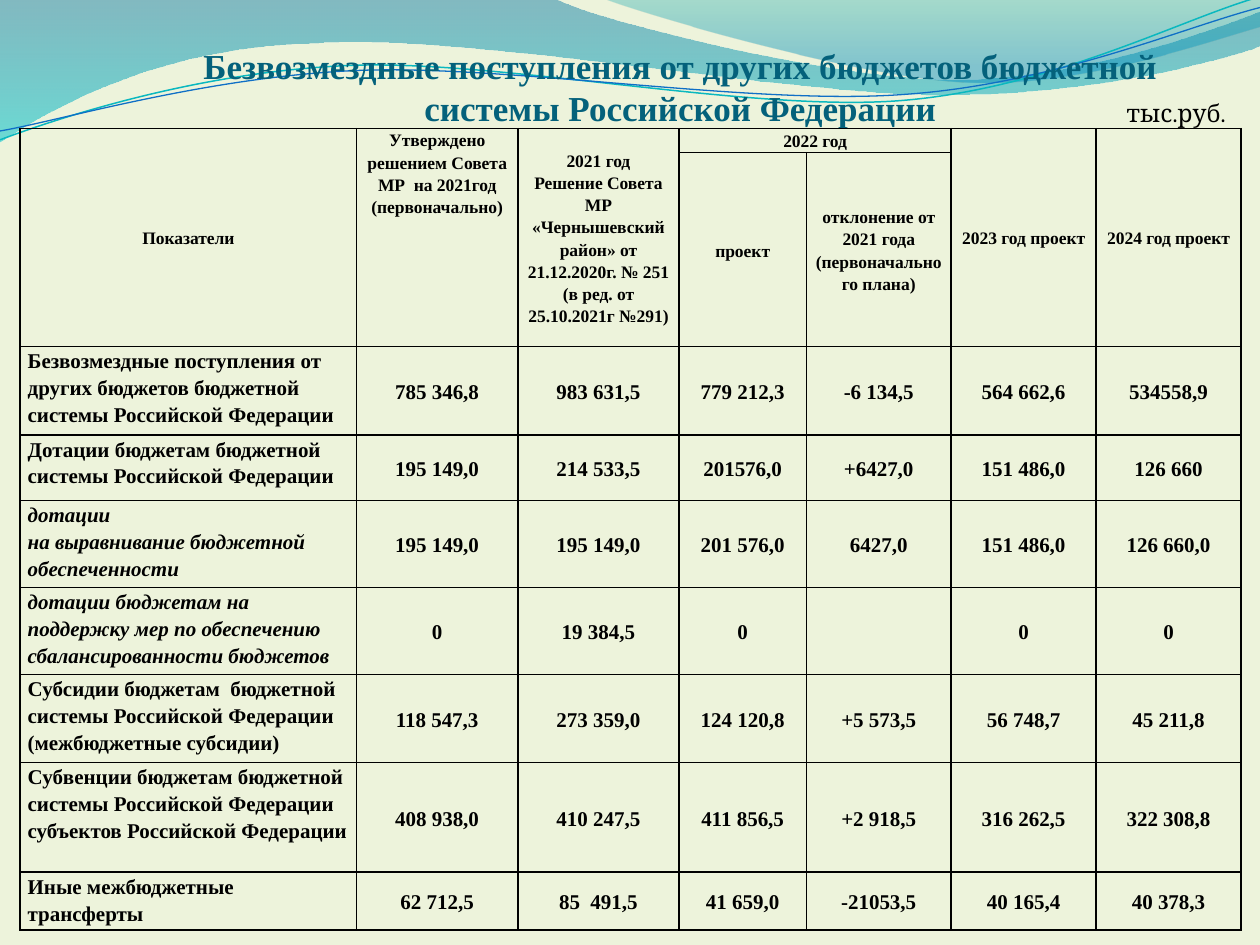
"""Build the slide on budget transfers with its wave header and table."""
import math

import pptx
import pptx.dml.color
import pptx.enum.text
import pptx.oxml
import pptx.oxml.ns
import pptx.util
from pptx.util import Inches

ALIGN = pptx.enum.text.PP_ALIGN
ANCHOR = pptx.enum.text.MSO_ANCHOR
FONT = "Times New Roman"
INK = "000000"
NAMESPACE = pptx.oxml.ns.nsdecls("a")

TITLE = "Безвозмездные поступления от других бюджетов бюджетной системы Российской Федерации"
UNIT = "тыс.руб."
HEADERS = [
    (0, 0, 1, 0, "Показатели"),
    (0, 1, 1, 1, "Утверждено решением Совета МР  на 2021год (первоначально)"),
    (0, 2, 1, 2, "2021 год\nРешение Совета МР «Чернышевский район» от 21.12.2020г. № 251 (в ред. от 25.10.2021г №291)"),
    (0, 3, 0, 4, "2022 год"),
    (0, 5, 1, 5, "2023 год проект"),
    (0, 6, 1, 6, "2024 год проект"),
    (1, 3, 1, 3, "проект"),
    (1, 4, 1, 4, "отклонение от 2021 года (первоначального плана)"),
]
ROWS = [
    ["Безвозмездные поступления от других бюджетов бюджетной системы Российской Федерации",
     "785 346,8", "983 631,5", "779 212,3", "-6 134,5", "564 662,6", "534558,9"],
    ["Дотации бюджетам бюджетной системы Российской Федерации",
     "195 149,0", "214 533,5", "201576,0", "+6427,0", "151 486,0", "126 660"],
    ["дотации\nна выравнивание бюджетной обеспеченности",
     "195 149,0", "195 149,0", "201 576,0", "6427,0", "151 486,0", "126 660,0"],
    ["дотации бюджетам на поддержку мер по обеспечению сбалансированности бюджетов",
     "0", "19 384,5", "0", "", "0", "0"],
    ["Субсидии бюджетам  бюджетной системы Российской Федерации (межбюджетные субсидии)",
     "118 547,3", "273 359,0", "124 120,8", "+5 573,5", "56 748,7", "45 211,8"],
    ["Субвенции бюджетам бюджетной системы Российской Федерации субъектов Российской Федерации",
     "408 938,0", "410 247,5", "411 856,5", "+2 918,5", "316 262,5", "322 308,8"],
    ["Иные межбюджетные трансферты",
     "62 712,5", "85  491,5", "41 659,0", "-21053,5", "40 165,4", "40 378,3"],
]
TABLE_PLACE = (0.16, 1.02, 9.69, 6.31)
COLUMN_WIDTHS = [2.67, 1.28, 1.28, 1.01, 1.15, 1.15, 1.15]
ROW_HEIGHTS = [0.17, 1.54, 0.7, 0.52, 0.45, 0.45, 0.7, 0.87, 0.35]

WAVES = [
    {"outline": [(0, 0), (4.4, -0.01), (4.76, 0.17, 6.64, 0.63, 7.58, 0.63),
                 (8.53, 0.63, 9.58, 0.26, 10, 0.09), (10.01, 0.36),
                 (9.83, 0.44, 8.7, 0.76, 7.46, 0.75), (6.22, 0.75, 3.82, 0.28, 2.57, 0.34),
                 (1.29, 0.36, 0.46, 0.83, -0.01, 1.13), (0, 0)],
     "stops": [(0, "0074A1", 45), (100, "00C6CF", 55)]},
    {"outline": [(4.79, -0.01), (5.09, 0.11, 6.82, 0.62, 7.69, 0.65),
                 (8.56, 0.69, 9.61, 0.32, 10, 0.21), (10, 0), (4.79, -0.01)],
     "stops": [(0, "00A1A9", 30), (80, "008BBF", 45)]},
    {"outline": [(0, 1.11), (0.48, 0.93, 1.58, 0.57, 2.77, 0.52),
                 (3.95, 0.47, 5.93, 0.89, 7.13, 0.8), (8.33, 0.71, 9.38, 0.15, 9.98, -0.02)],
     "line": ("0AB8BF", 0.85), "turn": (357.3, 4.99, 0.57)},
    {"outline": [(0, 1.04), (0.47, 0.96, 1.64, 0.61, 2.83, 0.56),
                 (4.03, 0.51, 5.97, 0.84, 7.17, 0.75), (8.36, 0.67, 9.41, 0.21, 10, 0.06)],
     "line": ("0F6FC6", 0.75), "turn": (357.3, 5, 0.59)},
]


def color(value):
    return pptx.dml.color.RGBColor.from_string(value)


def apply(target, values):
    for name, value in values.items():
        setattr(target, name, value)


def level(x, y, angle, center_x, center_y):
    turn = math.radians(-angle)
    across, down = x - center_x, y - center_y
    return (Inches(center_x + across * math.cos(turn) - down * math.sin(turn)),
            Inches(center_y + across * math.sin(turn) + down * math.cos(turn)))


def add_wave(page, outline, stops=None, line=None, turn=(0, 0, 0)):
    steps = [[level(x, y, *turn) for x, y in zip(step[::2], step[1::2])] for step in outline]
    builder = page.shapes.build_freeform(*steps[0][0], scale=1.0)
    builder.add_line_segments([step[-1] for step in steps[1:]], close=bool(stops))
    shape = builder.convert_to_shape()
    for segment, step in zip(list(shape._element.iter(pptx.oxml.ns.qn("a:lnTo"))), steps[1:]):
        if len(step) == 3:
            points = "".join(f'<a:pt x="{x - shape.left}" y="{y - shape.top}"/>' for x, y in step)
            segment.getparent().replace(segment, pptx.oxml.parse_xml(
                f'<a:cubicBezTo {NAMESPACE}>{points}</a:cubicBezTo>'))
    shape.rotation = turn[0]
    shape.shadow.inherit = False
    shape.fill.background()
    if line:
        shape.line.color.rgb = color(line[0])
        shape.line.width = pptx.util.Pt(line[1])
        return
    shape.line.fill.background()
    marks = "".join(
        f'<a:gs pos="{position * 1000}"><a:srgbClr val="{tint}"><a:alpha val="{alpha * 1000}"/></a:srgbClr></a:gs>'
        for position, tint, alpha in stops)
    gradient = pptx.oxml.parse_xml(
        f'<a:gradFill {NAMESPACE}><a:gsLst>{marks}</a:gsLst><a:lin ang="5400000" scaled="0"/></a:gradFill>')
    properties = shape._element.spPr
    properties.replace(properties.find(pptx.oxml.ns.qn("a:noFill")), gradient)


def write(frame, text, size, align, font=FONT, ink=INK, bold=True, italic=False, spacing=None):
    for index, line in enumerate(text.split("\n")):
        para = frame.add_paragraph() if index else frame.paragraphs[0]
        apply(para, {"alignment": align, "line_spacing": spacing})
        span = para.add_run()
        span.text = line
        apply(span.font, {"name": font, "size": pptx.util.Pt(size), "bold": bold, "italic": italic})
        span.font.color.rgb = color(ink)


def add_text(page, place, text, margins, anchor, **style):
    frame = page.shapes.add_textbox(*map(Inches, place)).text_frame
    apply(frame, {"word_wrap": True, "vertical_anchor": anchor})
    for side, margin in zip(("left", "top", "right", "bottom"), margins):
        setattr(frame, f"margin_{side}", Inches(margin))
    write(frame, text, align=ALIGN.CENTER, **style)


def format_cell(cell):
    apply(cell, {"margin_left": Inches(0.06), "margin_right": Inches(0.06), "margin_top": 0,
                 "margin_bottom": 0, "vertical_anchor": ANCHOR.MIDDLE})
    cell.fill.background()
    properties = cell._tc.get_or_add_tcPr()
    for index, side in enumerate("LRTB"):
        properties.insert(index, pptx.oxml.parse_xml(
            f'<a:ln{side} {NAMESPACE} w="12700"><a:solidFill><a:srgbClr val="{INK}"/></a:solidFill></a:ln{side}>'))


def add_budget_table(page):
    holder = page.shapes.add_table(len(ROW_HEIGHTS), len(COLUMN_WIDTHS), *map(Inches, TABLE_PLACE))
    table = holder.table
    apply(table, {"first_row": False, "horz_banding": False})
    for column, width in zip(table.columns, COLUMN_WIDTHS):
        column.width = Inches(width)
    for row, height in zip(table.rows, ROW_HEIGHTS):
        row.height = Inches(height)
    holder.height = Inches(TABLE_PLACE[3])
    for cell in table.iter_cells():
        format_cell(cell)
    for top, left, bottom, right, text in HEADERS:
        cell = table.cell(top, left)
        if (top, left) != (bottom, right):
            cell.merge(table.cell(bottom, right))
        write(cell.text_frame, text, 10, ALIGN.CENTER, spacing=1.15)
    table.cell(0, 1).vertical_anchor = ANCHOR.TOP
    for row, values in enumerate(ROWS, 2):
        table.cell(row, 0).vertical_anchor = ANCHOR.TOP
        for column, text in enumerate(values):
            if text:
                write(table.cell(row, column).text_frame, text, 12,
                      ALIGN.CENTER if column else ALIGN.LEFT,
                      italic=not column and text.startswith("дотации"), spacing=1.15)


def main():
    deck = pptx.Presentation()
    apply(deck, {"slide_width": Inches(10), "slide_height": Inches(7.5)})
    page = deck.slides.add_slide(deck.slide_layouts[6])
    page.background.fill.solid()
    page.background.fill.fore_color.rgb = color("EDF3DB")
    for wave in WAVES:
        add_wave(page, **wave)
    add_text(page, (1.17, 0, 8.46, 1.02), TITLE, (0, 0.05, 0, 0), ANCHOR.BOTTOM, size=20, ink="04617B")
    add_text(page, (8.67, 0.78, 1.33, 0.23), UNIT, (0.1, 0.05, 0.1, 0.05), ANCHOR.MIDDLE,
             size=14, font="Cambria", bold=False)
    add_budget_table(page)
    deck.save("out.pptx")


if __name__ == "__main__":
    main()
